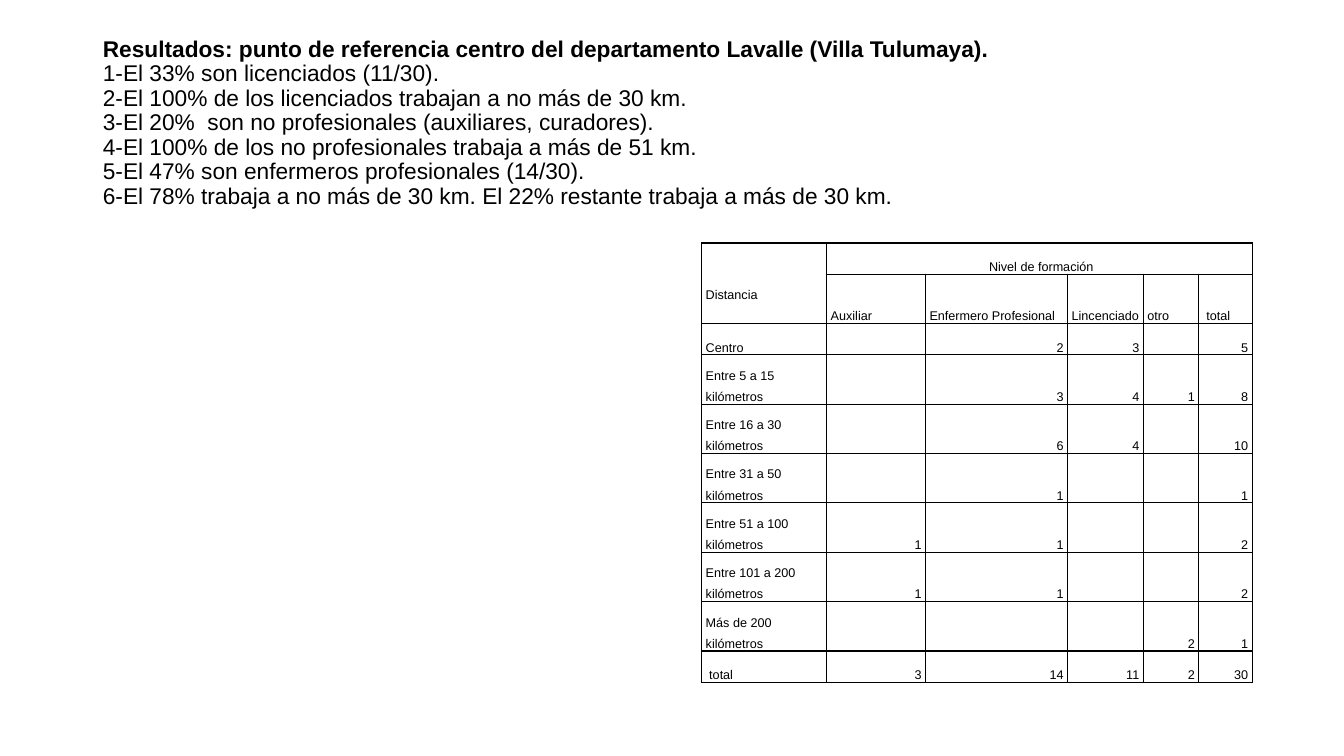
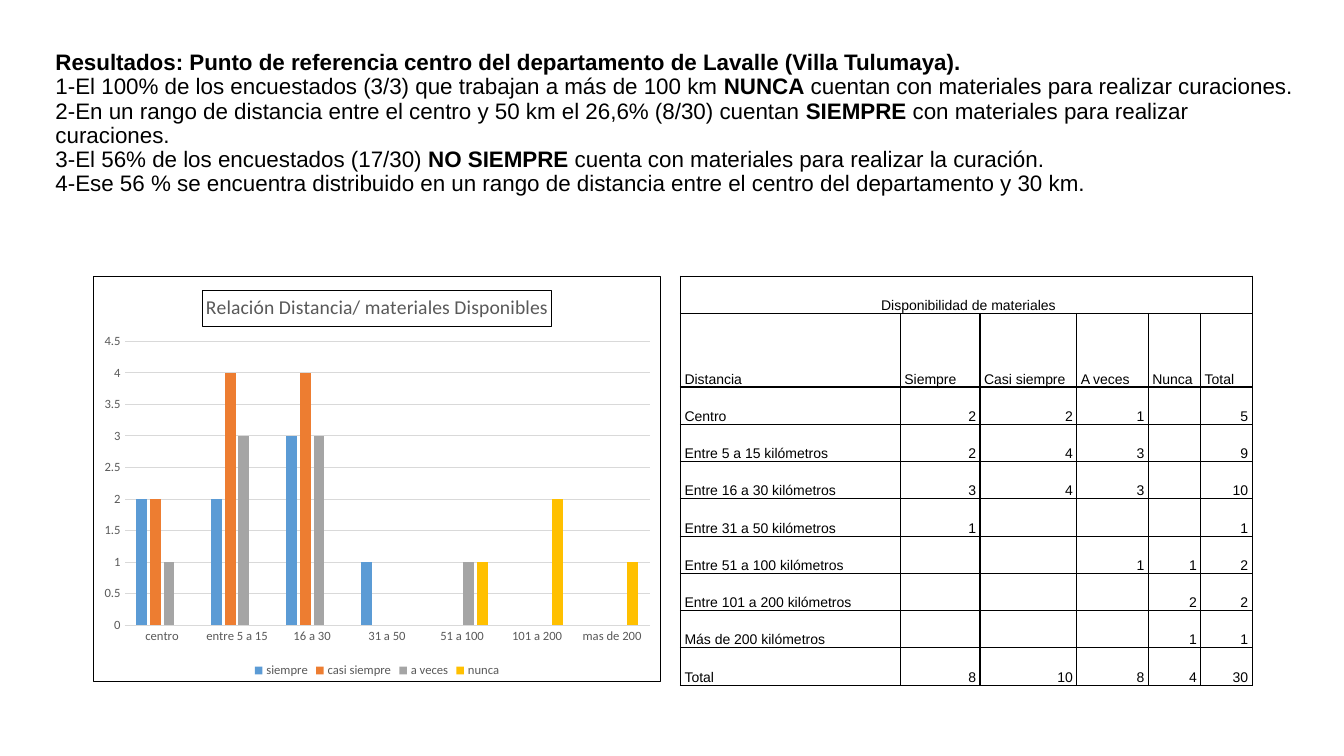
from lxml import etree
from pptx import Presentation
from pptx import util as u
from pptx.chart.data import CategoryChartData
from pptx.dml.color import RGBColor
from pptx.enum import chart as ch, text
from pptx.oxml.ns import qn

BLACK, GREY, GRID = "000000", "595959", "D9D9D9"
SERIES_COLORS = ["5B9BD5", "ED7D31", "A5A5A5", "FFC000"]
BODY_FONT, CHART_FONT = "Arial", "Calibri"
TITLE_ONLY = 5
LEFT, RIGHT = text.PP_ALIGN.LEFT, text.PP_ALIGN.RIGHT

LEVEL_FINDINGS = [
    "**Resultados: punto de referencia centro del departamento Lavalle (Villa Tulumaya).**",
    "1-El 33% son licenciados (11/30).",
    "2-El 100% de los licenciados trabajan a no más de 30 km.",
    "3-El 20%  son no profesionales (auxiliares, curadores).",
    "4-El 100% de los no profesionales trabaja a más de 51 km.",
    "5-El 47% son enfermeros profesionales (14/30).",
    "6-El 78% trabaja a no más de 30 km. El 22% restante trabaja a más de 30 km.",
]
LEVEL_ROWS = [
    ["Distancia", " Nivel de formación", "", "", "", ""],
    ["", "Auxiliar", "Enfermero Profesional", "Lincenciado", "otro", " total"],
    ["Centro", "", "2", "3", "", "5"],
    ["Entre 5 a 15 kilómetros", "", "3", "4", "1", "8"],
    ["Entre 16 a 30 kilómetros", "", "6", "4", "", "10"],
    ["Entre 31 a 50 kilómetros", "", "1", "", "", "1"],
    ["Entre 51 a 100 kilómetros", "1", "1", "", "", "2"],
    ["Entre 101 a 200 kilómetros", "1", "1", "", "", "2"],
    ["Más de 200 kilómetros", "", "", "", "2", "1"],
    [" total", "3", "14", "11", "2", "30"],
]

MATERIAL_FINDINGS = [
    "**Resultados: Punto de referencia centro del departamento de Lavalle (Villa Tulumaya).**",
    "1-El 100% de los encuestados (3/3) que trabajan a más de 100 km **NUNCA** cuentan con "
    "materiales para realizar curaciones.",
    "2-En un rango de distancia entre el centro y 50 km el 26,6% (8/30) cuentan **SIEMPRE** con "
    "materiales para realizar curaciones.",
    "3-El 56% de los encuestados (17/30) **NO SIEMPRE **cuenta con materiales para realizar "
    "la curación.",
    "4-Ese 56 % se encuentra distribuido en un rango de distancia entre el centro del "
    "departamento y 30 km.",
]
MATERIAL_ROWS = [
    [" Disponibilidad de materiales", "", "", "", "", ""],
    ["Distancia", "Siempre", "Casi siempre", "A veces", "Nunca", "Total"],
    ["Centro", "2", "2", "1", "", "5"],
    ["Entre 5 a 15 kilómetros", "2", "4", "3", "", "9"],
    ["Entre 16 a 30 kilómetros", "3", "4", "3", "", "10"],
    ["Entre 31 a 50 kilómetros", "1", "", "", "", "1"],
    ["Entre 51 a 100 kilómetros", "", "", "1", "1", "2"],
    ["Entre 101 a 200 kilómetros", "", "", "", "2", "2"],
    ["Más de 200 kilómetros", "", "", "", "1", "1"],
    ["Total", "8", "10", "8", "4", "30"],
]
DISTANCES = ["centro", "entre 5 a 15", "16 a 30", "31 a 50", "51 a 100", "101 a 200", "mas de 200"]
AVAILABILITY = {
    "siempre": [2, 2, 3, 1, None, None, None],
    "casi siempre": [2, 4, 4, None, None, None, None],
    "a veces": [1, 3, 3, None, 1, None, None],
    "nunca": [None, None, None, None, 1, 2, 1],
}


def rgb(color):
    return RGBColor.from_string(color)


def inches(box):
    return [u.Inches(length) for length in box]


def set_font(font, size, color=BLACK, name=BODY_FONT, bold=False):
    font.size, font.name, font.bold = u.Pt(size), name, bold
    font.color.rgb = rgb(color)


def set_line(line, color, width=0.75):
    line.color.rgb = rgb(color)
    line.width = u.Pt(width)


def add_findings(slide, box, findings, size):
    """Fill the title; text between ** marks is bold."""
    title = slide.shapes.title
    title.left, title.top, title.width, title.height = inches(box)
    frame = title.text_frame
    frame.word_wrap = True
    frame.auto_size = text.MSO_AUTO_SIZE.NONE
    frame.vertical_anchor = text.MSO_ANCHOR.MIDDLE
    for index, finding in enumerate(findings):
        para = frame.add_paragraph() if index else frame.paragraphs[0]
        para.alignment, para.line_spacing = LEFT, 0.9
        for part, words in enumerate(finding.split("**")):
            if words:
                run = para.add_run()
                run.text = words
                set_font(run.font, size, bold=part % 2 == 1)


def add_borders(cell):
    props = cell._tc.get_or_add_tcPr()
    for position, side in enumerate(["a:lnL", "a:lnR", "a:lnT", "a:lnB"]):
        border = etree.Element(qn(side), w=str(u.Pt(1)))
        fill = etree.SubElement(border, qn("a:solidFill"))
        etree.SubElement(fill, qn("a:srgbClr"), val=BLACK)
        props.insert(position, border)


def fill_cell(cell, words, size, alignment):
    cell.margin_left = cell.margin_right = u.Inches(0.04)
    cell.margin_top = cell.margin_bottom = 0
    cell.vertical_anchor = text.MSO_ANCHOR.BOTTOM
    cell.fill.background()
    add_borders(cell)
    para = cell.text_frame.paragraphs[0]
    para.alignment, para.line_spacing = alignment, 1.5
    if words:
        run = para.add_run()
        run.text = words
        set_font(run.font, size)


def add_distance_table(slide, box, rows, widths, heights, size):
    table = slide.shapes.add_table(len(rows), len(widths), *inches(box)).table
    table.first_row = table.horz_banding = False
    for column, width in zip(table.columns, widths):
        column.width = u.Inches(width)
    for row, height in zip(table.rows, heights):
        row.height = u.Inches(height)
    for r, row in enumerate(rows):
        for c, words in enumerate(row):
            fill_cell(table.cell(r, c), words, size, RIGHT if words.isdigit() else LEFT)
    return table


def merge_heading(table, first_column):
    heading = table.cell(0, first_column)
    heading.merge(table.cell(0, len(table.columns) - 1))
    heading.text_frame.paragraphs[0].alignment = text.PP_ALIGN.CENTER


def add_chart_border(chart):
    """Give the whole chart area a white fill and a thin black outline."""
    area = etree.Element(qn("c:spPr"))
    line = etree.Element(qn("a:ln"), w=str(u.Pt(0.75)))
    for parent, color in [(area, "FFFFFF"), (line, BLACK)]:
        fill = etree.SubElement(parent, qn("a:solidFill"))
        etree.SubElement(fill, qn("a:srgbClr"), val=color)
    area.append(line)
    chart._chartSpace.find(qn("c:chart")).addnext(area)


def add_availability_chart(slide, box):
    data = CategoryChartData()
    data.categories = DISTANCES
    for name, counts in AVAILABILITY.items():
        data.add_series(name, counts)
    chart = slide.shapes.add_chart(ch.XL_CHART_TYPE.COLUMN_CLUSTERED, *inches(box), data).chart
    set_font(chart.font, 10, name=CHART_FONT)
    add_chart_border(chart)

    heading = chart.chart_title.text_frame.paragraphs[0].add_run()
    heading.text = "Relación Distancia/ materiales Disponibles"
    set_font(heading.font, 14, GREY, CHART_FONT)
    set_line(chart.chart_title.format.line, BLACK)

    chart.has_legend = True
    chart.legend.position = ch.XL_LEGEND_POSITION.BOTTOM
    chart.legend.include_in_layout = False
    set_font(chart.legend.font, 9, GREY, CHART_FONT)

    plot = chart.plots[0]
    plot.gap_width, plot.overlap, plot.vary_by_categories = 219, -27, False
    for series, color in zip(plot.series, SERIES_COLORS):
        series.format.fill.solid()
        series.format.fill.fore_color.rgb = rgb(color)

    for axis in (chart.category_axis, chart.value_axis):
        axis.major_tick_mark = axis.minor_tick_mark = ch.XL_TICK_MARK.NONE
        set_font(axis.tick_labels.font, 9, GREY, CHART_FONT)
    set_line(chart.category_axis.format.line, GRID)
    chart.value_axis.format.line.fill.background()
    chart.value_axis.maximum_scale, chart.value_axis.major_unit = 4.5, 0.5
    set_line(chart.value_axis.major_gridlines.format.line, GRID)


def add_level_slide(prs):
    slide = prs.slides.add_slide(prs.slide_layouts[TITLE_ONLY])
    add_findings(slide, (0.92, 0.5, 11.5, 1.45), LEVEL_FINDINGS, 16.2)
    table = add_distance_table(
        slide, (6.96, 2.41, 5.46, 4.36), LEVEL_ROWS, [1.24, 0.98, 1.41, 0.75, 0.55, 0.53],
        [0.31, 0.49, 0.31] + [0.49] * 6 + [0.31], 9)
    merge_heading(table, 1)
    distance = table.cell(0, 0)
    distance.merge(table.cell(1, 0))
    distance.margin_bottom = u.Inches(0.21)


def add_material_slide(prs):
    slide = prs.slides.add_slide(prs.slide_layouts[TITLE_ONLY])
    add_findings(slide, (0.45, 0.44, 12.61, 1.58), MATERIAL_FINDINGS, 16)
    table = add_distance_table(
        slide, (6.75, 2.74, 5.67, 4.03), MATERIAL_ROWS, [2.18, 0.79, 0.96, 0.71, 0.52, 0.51],
        [0.37, 0.73] + [0.37] * 8, 10)
    merge_heading(table, 0)
    add_availability_chart(slide, (0.92, 2.74, 5.64, 4.03))


def main():
    prs = Presentation()
    prs.slide_width, prs.slide_height = inches((13.33, 7.5))
    add_level_slide(prs)
    add_material_slide(prs)
    prs.save("out.pptx")


if __name__ == "__main__":
    main()
